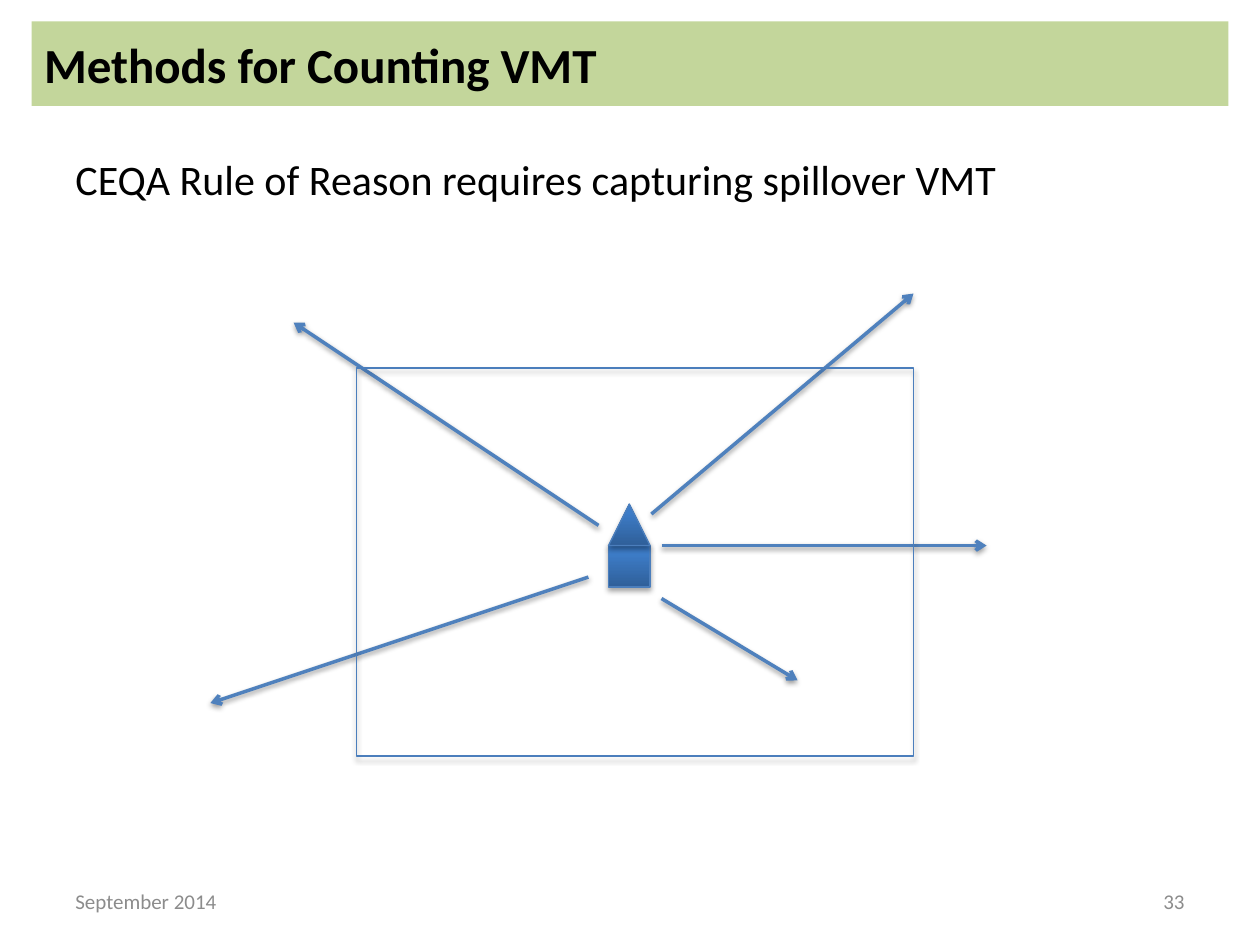
from lxml import etree
from pptx import Presentation
from pptx.dml.color import RGBColor
from pptx.enum.shapes import MSO_CONNECTOR as Link, MSO_SHAPE as Kind
from pptx.enum.text import MSO_ANCHOR as Anchor, PP_ALIGN as Align
from pptx.oxml import parse_xml
from pptx.oxml.ns import nsdecls, qn
from pptx.util import Inches, Pt

HEX = {
    "band": "C3D69B", "ink": "000000", "muted": "8C8C8C",
    "edge": "4B7EBC", "arrow": "4F81BD",
}
STOPS = [(0, "2F5F99"), (80, "3D7CC7"), (100, "3A7CCB")]
FONT = "Calibri"


def color(name):
    return RGBColor.from_string(HEX[name])


def write(shape, text, ink="ink", align=Align.LEFT, anchor=Anchor.MIDDLE, **form):
    frame = shape.text_frame
    frame.text = text
    frame.word_wrap = True
    frame.vertical_anchor = anchor
    para = frame.paragraphs[0]
    para.alignment = align
    for key, value in {"name": FONT, **form}.items():
        setattr(para.font, key, value)
    para.font.color.rgb = color(ink)


def label(slide, box, text, **form):
    write(slide.shapes.add_textbox(*map(Inches, box)), text, **form)


def shade(shape, alpha, gap):
    """Drop a soft shadow straight down; call after the line is set."""
    shape._element.spPr.append(parse_xml(
        f'<a:effectLst {nsdecls("a")}><a:outerShdw blurRad="{Pt(3.1)}" '
        f'dist="{Pt(gap)}" dir="5400000" rotWithShape="0">'
        f'<a:srgbClr val="{HEX["ink"]}"><a:alpha val="{alpha * 1000}"/>'
        '</a:srgbClr></a:outerShdw></a:effectLst>'))


def blend(shape):
    """Fill with the three-stop gradient, dark at the foot."""
    shape.fill.gradient()
    shape.fill.gradient_angle = 90
    stops = shape._element.spPr.find(qn("a:gradFill")).find(qn("a:gsLst"))
    for old in list(stops):
        stops.remove(old)
    for place, tone in STOPS:
        stop = etree.SubElement(stops, qn("a:gs"), pos=str(place * 1000))
        etree.SubElement(stop, qn("a:srgbClr"), val=tone)


def add_block(slide, kind, box, solid=True):
    shape = slide.shapes.add_shape(kind, *map(Inches, box))
    if solid:
        blend(shape)
    else:
        shape.fill.background()
    shape.line.color.rgb = color("edge")
    shape.line.width = Pt(0.75)
    shade(shape, 35, 1.8)


def add_title(slide, box, text):
    title = slide.shapes.title
    for key, value in zip(("left", "top", "width", "height"), box):
        setattr(title, key, Inches(value))
    title.fill.solid()
    title.fill.fore_color.rgb = color("band")
    write(title, text, size=Pt(28), bold=True)


def add_house(slide, box):
    left, top, width, height = box
    half = height / 2
    add_block(slide, Kind.RECTANGLE, (left, top + half, width, half))
    add_block(slide, Kind.ISOSCELES_TRIANGLE, (left, top, width, half))


def add_trip(slide, start, end):
    trip = slide.shapes.add_connector(
        Link.STRAIGHT, *map(Inches, (*start, *end)))
    trip.line.color.rgb = color("arrow")
    trip.line.width = Pt(2)
    etree.SubElement(trip.line._get_or_add_ln(), qn("a:tailEnd"), type="arrow")
    shade(trip, 38, 1.6)


def add_map(slide, box):
    """House, its trips and the area boundary, placed from the box corner."""
    left, top = box[:2]
    add_house(slide, (left + 2, top + 1.08, 0.33, 0.66))
    trips = [
        ((2.42, 1.41), (5, 1.41)),
        ((2.34, 1.16), (4.42, -0.59)),
        ((1.92, 1.25), (-0.5, -0.36)),
        ((1.84, 1.66), (-1.16, 2.66)),
        ((2.42, 1.83), (3.5, 2.48)),
    ]
    for ends in trips:
        add_trip(slide, *((left + x, top + y) for x, y in ends))
    add_block(slide, Kind.RECTANGLE, box, solid=False)


def add_footer(slide, box):
    left, top, width, height = box
    part = 2.33
    form = {"ink": "muted", "size": Pt(12)}
    label(slide, (left, top, part, height), "September 2014", **form)
    label(slide, (left + width - part, top, part, height), "33",
          align=Align.RIGHT, **form)


def main():
    deck = Presentation()
    deck.slide_width, deck.slide_height = Inches(10), Inches(7.5)
    slide = deck.slides.add_slide(deck.slide_layouts[5])

    # Heading and statement
    add_title(slide, (0.25, 0.17, 9.5, 0.67), "Methods for Counting VMT")
    label(slide, (0.5, 1.17, 9.08, 5.42),
          "CEQA Rule of Reason requires capturing spillover VMT",
          anchor=Anchor.TOP, size=Pt(24))

    # Diagram
    add_map(slide, (2.83, 2.92, 4.42, 3.08))

    # Date and page number
    add_footer(slide, (0.5, 6.95, 9, 0.4))
    deck.save("out.pptx")


if __name__ == "__main__":
    main()
